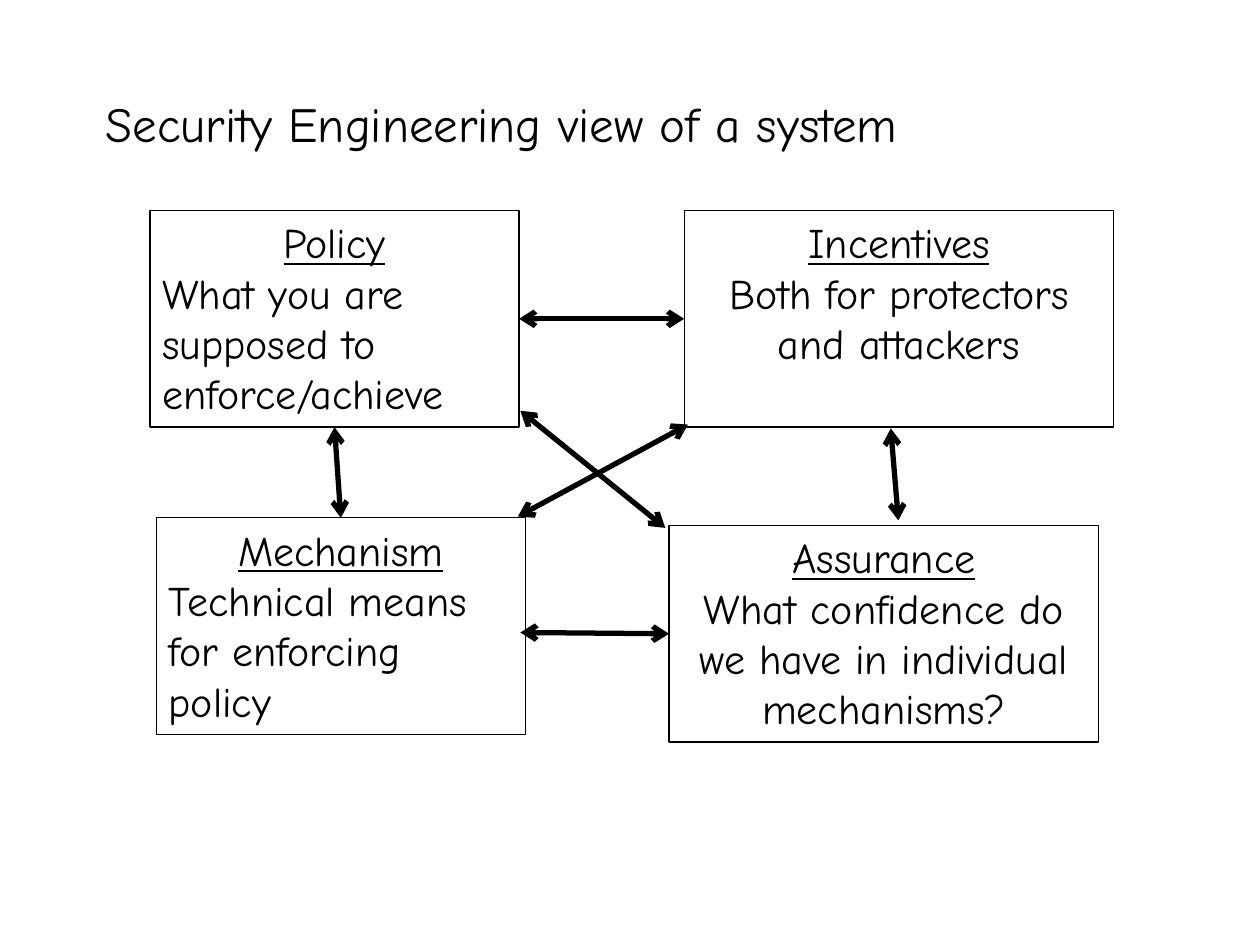
from lxml.etree import SubElement
from pptx import Presentation
from pptx.dml.color import RGBColor
from pptx.enum.shapes import MSO_CONNECTOR, MSO_SHAPE
from pptx.enum.text import MSO_ANCHOR, PP_ALIGN
from pptx.oxml.ns import qn
from pptx.util import Inches, Pt

COLORS = {"ink": "000000", "paper": "FFFFFF"}
FONT = "Comic Neue"
TITLE = "Security Engineering view of a system"
BOX_HEIGHT = 1.72
TOP, LEFT, BOTTOM, RIGHT = range(4)

# name, description, description alignment, (left, top, width)
BOXES = [
    ("Policy", "What you are supposed to enforce/achieve", PP_ALIGN.LEFT, (1.19, 1.67, 2.93)),
    ("Mechanism", "Technical means for enforcing policy", PP_ALIGN.LEFT, (1.24, 4.11, 2.93)),
    ("Incentives", "Both for protectors and attackers", PP_ALIGN.CENTER, (5.43, 1.67, 3.41)),
    ("Assurance", "What confidence do we have in individual mechanisms?", PP_ALIGN.CENTER,
     (5.31, 4.17, 3.41)),
]

# Each end is a point, or a box name and the side it is joined to
ARROWS = [
    (("Incentives", LEFT), ("Policy", RIGHT)),
    (("Assurance", LEFT), (4.13, 5.02)),
    (("Policy", BOTTOM), ("Mechanism", TOP)),
    ((7.07, 3.4), (7.13, 4.13)),
    ((5.46, 3.37), (4.11, 4.1)),
    ((4.13, 3.26), (5.28, 4.19)),
]


def color(name):
    return RGBColor.from_string(COLORS[name])


def write(para, text, size=24, align=PP_ALIGN.LEFT, underline=False):
    para.alignment = align
    span = para.add_run()
    span.text = text
    span.font.name = FONT
    span.font.size = Pt(size)
    span.font.underline = underline
    span.font.color.rgb = color("ink")


def add_title(page):
    box = page.shapes.add_textbox(Inches(0.74), Inches(0.35), Inches(8.5), Inches(1.25))
    frame = box.text_frame
    frame.word_wrap = True
    frame.vertical_anchor = MSO_ANCHOR.MIDDLE
    write(frame.paragraphs[0], TITLE, size=28)


def add_box(page, name, description, align, place):
    left, top, width = map(Inches, place)
    box = page.shapes.add_shape(MSO_SHAPE.RECTANGLE, left, top, width, Inches(BOX_HEIGHT))
    box.shadow.inherit = False
    box.fill.solid()
    box.fill.fore_color.rgb = color("paper")
    box.line.color.rgb = color("ink")
    box.line.width = Pt(0.75)
    frame = box.text_frame
    frame.word_wrap = True
    frame.vertical_anchor = MSO_ANCHOR.TOP
    write(frame.paragraphs[0], name, align=PP_ALIGN.CENTER, underline=True)
    write(frame.add_paragraph(), description, align=align)
    return box


def add_arrow(page, boxes, start, end):
    """Draw a double-headed arrow, joining each end that names a box."""
    points = [(0, 0) if point[0] in boxes else point for point in (start, end)]
    arrow = page.shapes.add_connector(
        MSO_CONNECTOR.STRAIGHT, *(Inches(value) for point in points for value in point))
    for (target, side), join in ((start, arrow.begin_connect), (end, arrow.end_connect)):
        if target in boxes:
            join(boxes[target], side)
    arrow.line.color.rgb = color("ink")
    arrow.line.width = Pt(3)
    properties = arrow.line._get_or_add_ln()
    for tag in ("a:headEnd", "a:tailEnd"):
        SubElement(properties, qn(tag), type="arrow")
    SubElement(arrow._element.spPr, qn("a:effectLst"))


def main():
    deck = Presentation()
    deck.slide_width, deck.slide_height = Inches(10), Inches(7.5)
    page = deck.slides.add_slide(deck.slide_layouts[6])
    add_title(page)
    boxes = {spec_row[0]: add_box(page, *spec_row) for spec_row in BOXES}
    for start, end in ARROWS:
        add_arrow(page, boxes, start, end)
    deck.save("out.pptx")


if __name__ == "__main__":
    main()
